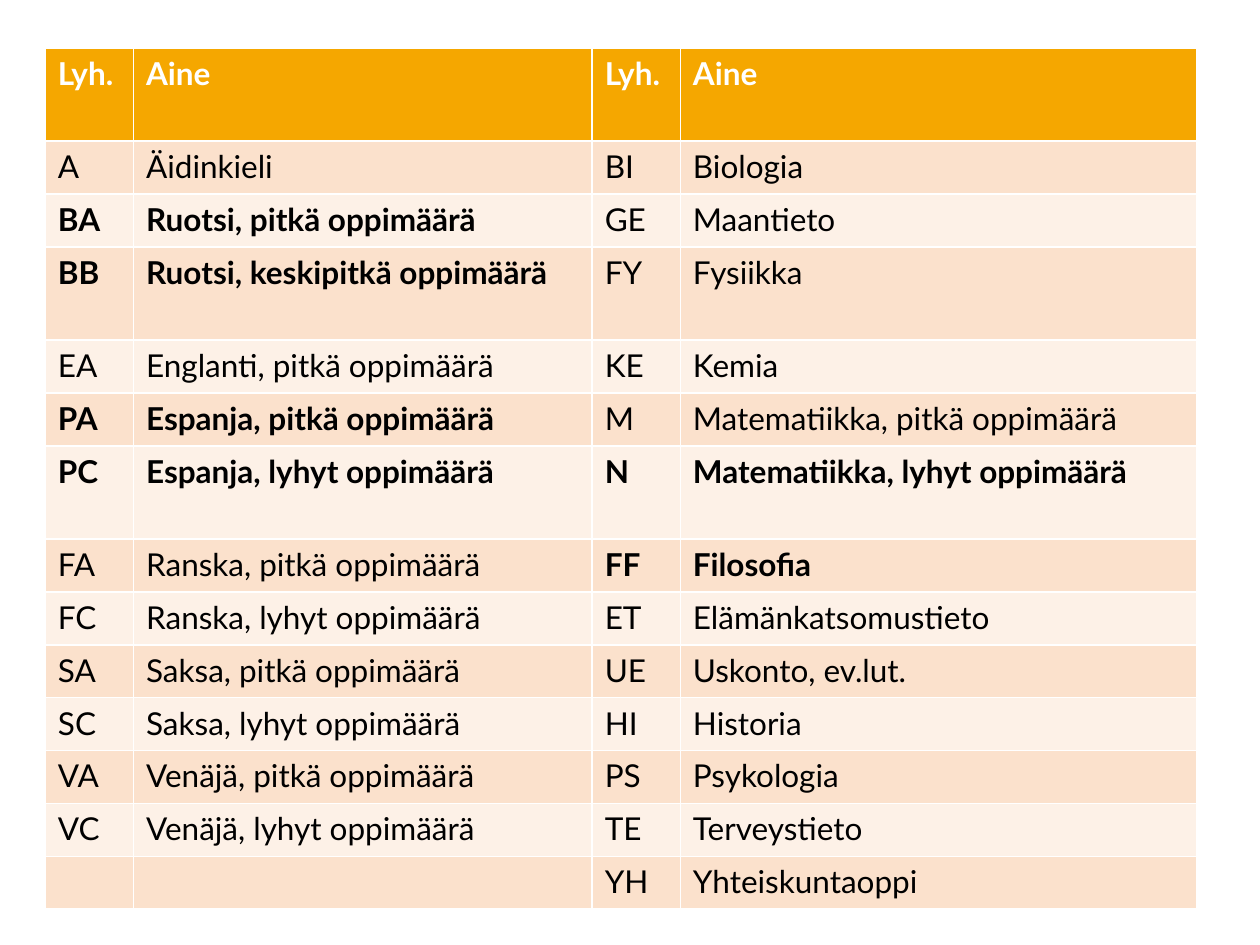
"""Build a slide with a table of school subjects and their abbreviations."""
from typing import NamedTuple

from pptx import Presentation
from pptx.dml.color import RGBColor as Rgb
from pptx.util import Inches, Pt

HUES = {"head": "F5A700", "odd": "FBE1CC", "even": "FDF1E7", "white": "FFFFFF", "ink": "000000"}
WIDTHS = (0.7, 3.64, 0.7, 4.1)
LOW, TALL = 0.42, 0.74


class Entry(NamedTuple):
    code: str
    name: str
    bold: bool = False


class Line(NamedTuple):
    left: Entry
    right: Entry
    high: float = LOW


HEAD = Entry("Lyh.", "Aine", True)
LINES = (
    Line(HEAD, HEAD, TALL),
    Line(Entry("A", "Äidinkieli"), Entry("BI", "Biologia")),
    Line(Entry("BA", "Ruotsi, pitkä oppimäärä", True), Entry("GE", "Maantieto")),
    Line(Entry("BB", "Ruotsi, keskipitkä oppimäärä", True), Entry("FY", "Fysiikka"), TALL),
    Line(Entry("EA", "Englanti, pitkä oppimäärä"), Entry("KE", "Kemia")),
    Line(Entry("PA", "Espanja, pitkä oppimäärä", True), Entry("M", "Matematiikka, pitkä oppimäärä")),
    Line(Entry("PC", "Espanja, lyhyt oppimäärä", True),
         Entry("N", "Matematiikka, lyhyt oppimäärä", True), TALL),
    Line(Entry("FA", "Ranska, pitkä oppimäärä"), Entry("FF", "Filosofia", True)),
    Line(Entry("FC", "Ranska, lyhyt oppimäärä"), Entry("ET", "Elämänkatsomustieto")),
    Line(Entry("SA", "Saksa, pitkä oppimäärä"), Entry("UE", "Uskonto, ev.lut.")),
    Line(Entry("SC", "Saksa, lyhyt oppimäärä"), Entry("HI", "Historia")),
    Line(Entry("VA", "Venäjä, pitkä oppimäärä"), Entry("PS", "Psykologia")),
    Line(Entry("VC", "Venäjä, lyhyt oppimäärä"), Entry("TE", "Terveystieto")),
    Line(Entry("", ""), Entry("YH", "Yhteiskuntaoppi")),
)


def paint(cell, text: str, bold: bool, fill: str, ink: str) -> None:
    cell.fill.solid()
    cell.fill.fore_color.rgb = Rgb.from_string(HUES[fill])
    cell.text = text
    font = cell.text_frame.paragraphs[0].font
    font.name, font.size, font.bold = "Lato", Pt(18), bold
    font.color.rgb = Rgb.from_string(HUES[ink])


def draw(table, row: int, line: Line) -> None:
    table.rows[row].height = Inches(line.high)
    fill = "head" if row == 0 else "odd" if row % 2 else "even"
    ink = "ink" if row else "white"
    for start, entry in ((0, line.left), (2, line.right)):
        for col, text in enumerate((entry.code, entry.name), start):
            paint(table.cell(row, col), text, entry.bold, fill, ink)


def main() -> None:
    deck = Presentation()
    deck.slide_width, deck.slide_height = Inches(10), Inches(7.5)
    slide = deck.slides.add_slide(deck.slide_layouts[6])
    high = sum(line.high for line in LINES)
    table = slide.shapes.add_table(
        len(LINES), len(WIDTHS), Inches(0.36), Inches(0.38),
        Inches(sum(WIDTHS)), Inches(high)).table
    for col, width in zip(table.columns, WIDTHS):
        col.width = Inches(width)
    for row, line in enumerate(LINES):
        draw(table, row, line)
    deck.save("out.pptx")


if __name__ == "__main__":
    main()
